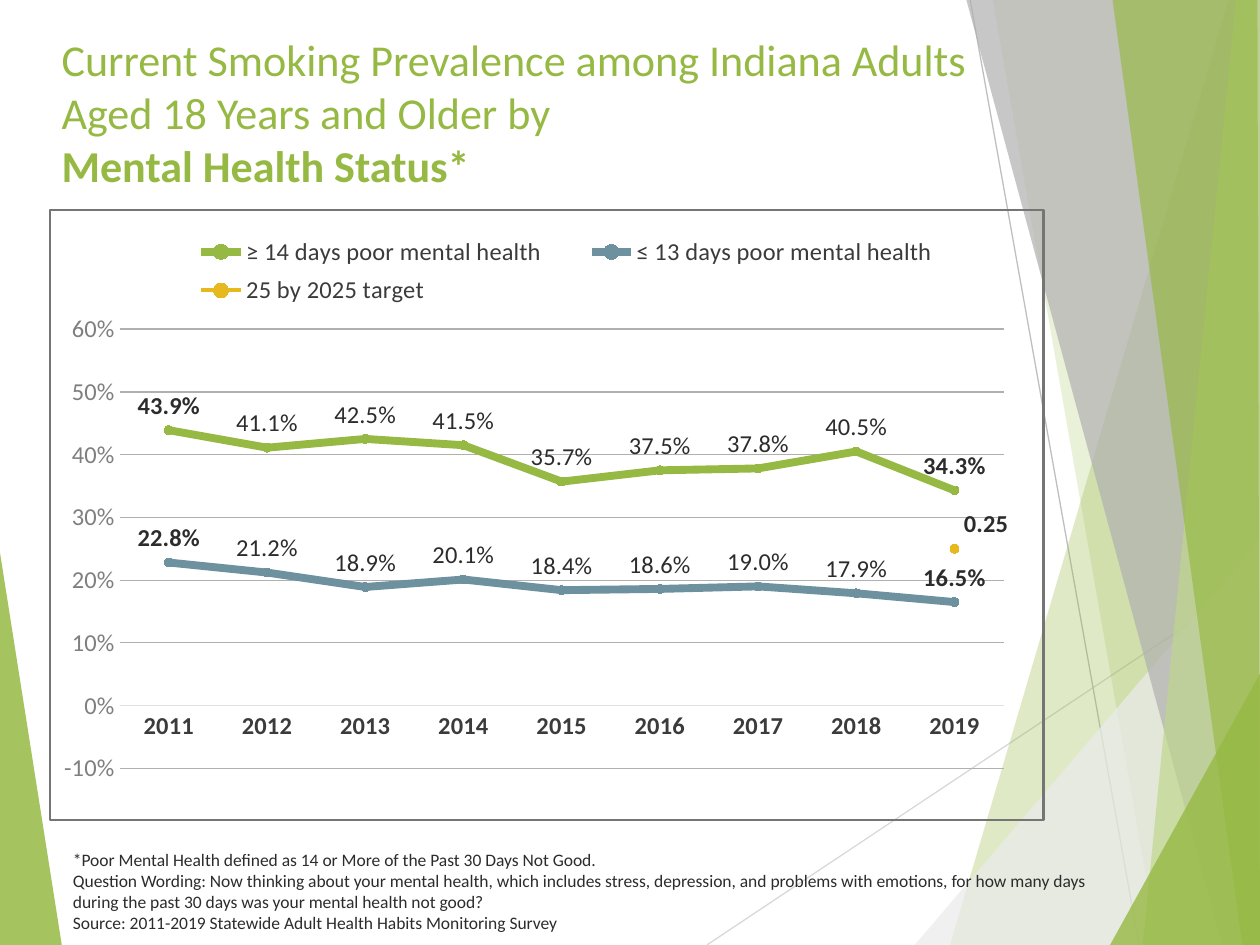
from typing import NamedTuple

from lxml.etree import SubElement
from pptx import Presentation
from pptx.chart.data import CategoryChartData
from pptx.dml.color import RGBColor
from pptx.enum.chart import (XL_CHART_TYPE, XL_LABEL_POSITION, XL_LEGEND_POSITION,
                             XL_MARKER_STYLE, XL_TICK_MARK)
from pptx.enum.shapes import MSO_CONNECTOR
from pptx.enum.text import MSO_ANCHOR
from pptx.oxml import parse_xml
from pptx.oxml.ns import nsdecls, qn
from pptx.util import Inches, Pt

FONT = "Calibri"
GREEN = RGBColor(0x96, 0xB9, 0x43)
PALE_GREEN = RGBColor(0xC0, 0xD6, 0x8D)
BLUE = RGBColor(0x6E, 0x91, 0xA0)
GOLD = RGBColor(0xE6, 0xB9, 0x1E)
ORANGE = RGBColor(0xFF, 0x99, 0x00)
INK = RGBColor(0x2C, 0x2C, 0x2C)
DARK = RGBColor(0x3B, 0x3B, 0x3B)
AXIS_TEXT = RGBColor(0x7F, 0x7F, 0x7F)
BORDER = RGBColor(0x75, 0x75, 0x75)
GRAY = RGBColor(0xB0, 0xB0, 0xB0)
MIST = RGBColor(0xEB, 0xEB, 0xEB)
AXIS_LINE = RGBColor(0xE1, 0xE1, 0xE1)
RULE = RGBColor(0xBF, 0xBF, 0xBF)
PALE_RULE = RGBColor(0xD9, 0xD9, 0xD9)

W, H = Inches(10), Inches(7.5)


class Facet(NamedTuple):
    """Filled polygon; points in percent of the slide's width and height."""
    points: list[tuple[float, float]]
    color: RGBColor
    opacity: int


class Rule(NamedTuple):
    """Thin line; ends in percent of the slide's width and height."""
    start: tuple[float, float]
    end: tuple[float, float]
    color: RGBColor


class Trend(NamedTuple):
    name: str
    values: list[float | None]
    color: RGBColor
    marker: RGBColor
    width: float
    number_format: str
    position: XL_LABEL_POSITION
    bold_points: list[int]


BACKDROP = [
    Facet([(0, 58.5), (4.9, 100), (0, 100)], GREEN, 85),
    Rule((56.1, 100), (100, 61), PALE_RULE),
    Rule((77, 0), (90.4, 100), RULE),
    Facet([(97.5, 0), (75.4, 100), (100, 100), (100, 0)], GREEN, 30),
    Facet([(78.8, 0), (91.9, 100), (100, 100), (100, 0)], GREEN, 20),
    Facet([(72.6, 100), (100, 57.2), (100, 100)], MIST, 72),
    Facet([(76.7, 0), (97, 100), (100, 100), (100, 0)], GRAY, 70),
    Facet([(98.1, 0), (90.7, 100), (100, 100), (100, 0)], PALE_GREEN, 70),
    Facet([(88.3, 0), (98.6, 100), (100, 100), (99.8, 0)], GREEN, 65),
    Facet([(88.1, 100), (100, 71.3), (100, 100)], GREEN, 80),
]

YEARS = [str(year) for year in range(2011, 2020)]
TRENDS = [
    Trend("≥ 14 days poor mental health",
          [0.439, 0.411, 0.425, 0.415, 0.357, 0.375, 0.378, 0.405, 0.343],
          GREEN, GREEN, 4.5, "0.0%", XL_LABEL_POSITION.ABOVE, [0, 8]),
    Trend("≤ 13 days poor mental health",
          [0.228, 0.212, 0.189, 0.201, 0.184, 0.186, 0.19, 0.179, 0.165],
          BLUE, BLUE, 4.5, "0.0%", XL_LABEL_POSITION.ABOVE, [0, 8]),
    Trend("25 by 2025 target", [None] * 8 + [0.25],
          GOLD, ORANGE, 2.25, "General", XL_LABEL_POSITION.RIGHT, [8]),
]


def share(point: tuple[float, float]) -> tuple[int, int]:
    return round(W * point[0] / 100), round(H * point[1] / 100)


def draw_facet(shapes, facet: Facet) -> None:
    first, *rest = map(share, facet.points)
    builder = shapes.build_freeform(*first)
    builder.add_line_segments(rest)
    sp = builder.convert_to_shape()
    sp.shadow.inherit = False
    sp.fill.solid()
    sp.fill.fore_color.rgb = facet.color
    sp.line.fill.background()
    color = sp._element.spPr.find(".//" + qn("a:srgbClr"))
    SubElement(color, qn("a:alpha"), val=str(facet.opacity * 1000))


def draw_rule(shapes, rule: Rule) -> None:
    line = shapes.add_connector(MSO_CONNECTOR.STRAIGHT, *share(rule.start), *share(rule.end))
    line.line.color.rgb = rule.color
    line.line.width = Pt(0.75)
    SubElement(line._element.spPr, qn("a:effectLst"))


def add_text_frame(shapes, left: float, top: float, width: float, height: float):
    tf = shapes.add_textbox(*map(Inches, (left, top, width, height))).text_frame
    tf.word_wrap = True
    return tf


def style_font(font, size: float, color: RGBColor, bold: bool = False) -> None:
    font.name, font.size, font.bold = FONT, Pt(size), bold
    font.color.rgb = color


def set_layout(parent, index: int, **values: float | str) -> None:
    """Give a chart part a manual layout, in shares of the chart's size."""
    for old in parent.findall(qn("c:layout")):
        parent.remove(old)
    items = "".join(f'<c:{key} val="{value}"/>' for key, value in values.items())
    parent.insert(index, parse_xml(f'<c:layout {nsdecls("c")}><c:manualLayout>{items}'
                                   '</c:manualLayout></c:layout>'))


def style_trend(series, trend: Trend) -> None:
    series.smooth = False
    series.format.line.color.rgb = trend.color
    series.format.line.width = Pt(trend.width)
    series.marker.style = XL_MARKER_STYLE.CIRCLE
    series.marker.size = 5
    series.marker.format.fill.solid()
    series.marker.format.fill.fore_color.rgb = trend.marker
    series.marker.format.line.color.rgb = trend.color
    labels = series.data_labels
    labels.show_value = True
    labels.number_format, labels.number_format_is_linked = trend.number_format, False
    labels.position = trend.position
    style_font(labels.font, 14, INK)
    for index in trend.bold_points:
        label = series.points[index].data_label
        style_font(label.font, 14, INK, bold=True)
        label.position = trend.position


def add_trend_chart(shapes) -> None:
    data = CategoryChartData()
    data.categories = YEARS
    for trend in TRENDS:
        data.add_series(trend.name, trend.values, trend.number_format)
    chart = shapes.add_chart(XL_CHART_TYPE.LINE_MARKERS, Inches(0.39), Inches(1.66),
                             Inches(7.9), Inches(4.86), data).chart
    chart.has_title = False
    style_font(chart.font, 10, DARK)
    for series, trend in zip(chart.plots[0].series, TRENDS):
        style_trend(series, trend)

    # Axes
    years, percent = chart.category_axis, chart.value_axis
    for axis in (years, percent):
        axis.major_tick_mark = axis.minor_tick_mark = XL_TICK_MARK.NONE
    style_font(years.tick_labels.font, 14, DARK, bold=True)
    years.format.line.color.rgb = AXIS_LINE
    years.format.line.width = Pt(0.75)
    style_font(percent.tick_labels.font, 14, AXIS_TEXT)
    percent.tick_labels.number_format = "0%"
    percent.tick_labels.number_format_is_linked = False
    percent.minimum_scale, percent.maximum_scale, percent.major_unit = -0.1, 0.6, 0.1
    percent.format.line.fill.background()
    percent.major_gridlines.format.line.color.rgb = GRAY
    percent.major_gridlines.format.line.width = Pt(0.75)

    # Legend above the plot
    chart.has_legend = True
    chart.legend.position = XL_LEGEND_POSITION.BOTTOM
    chart.legend.include_in_layout = True
    style_font(chart.legend.font, 14, DARK)
    set_layout(chart.legend._element, 1, xMode="edge", yMode="edge",
               x=0.11, y=0.03, w=0.82, h=0.14)

    # Plot area, raised target label and frame
    space = chart._chartSpace
    set_layout(space.find(".//" + qn("c:plotArea")), 0, layoutTarget="inner",
               xMode="edge", yMode="edge", x=0.07, y=0.195, w=0.89, h=0.72)
    target = chart.plots[0].series[2]._element.find(".//" + qn("c:dLbl"))
    set_layout(target, 1, x=0, y=-0.04)
    space.find(qn("c:chart")).addnext(parse_xml(
        f'<c:spPr {nsdecls("c", "a")}><a:noFill/><a:ln w="{Pt(1.25)}"><a:solidFill>'
        f'<a:srgbClr val="{BORDER}"/></a:solidFill></a:ln></c:spPr>'))


def main() -> None:
    prs = Presentation()
    prs.slide_width, prs.slide_height = W, H
    shapes = prs.slides.add_slide(prs.slide_layouts[6]).shapes

    # Faceted backdrop
    for part in BACKDROP:
        (draw_facet if isinstance(part, Facet) else draw_rule)(shapes, part)

    # Title
    tf = add_text_frame(shapes, 0.39, 0.17, 7.9, 1.44)
    tf.vertical_anchor = MSO_ANCHOR.MIDDLE
    p = tf.paragraphs[0]
    style_font(p.font, 25.2, GREEN)
    p.add_run().text = "Current Smoking Prevalence among Indiana Adults Aged 18 Years and Older by "
    p.add_line_break()
    r = p.add_run()
    r.text = "Mental Health Status*"
    r.font.bold = True

    add_trend_chart(shapes)

    # Footnotes
    tf = add_text_frame(shapes, 0.48, 6.69, 8.38, 0.77)
    tf.text = ("*Poor Mental Health defined as 14 or More of the Past 30 Days Not Good. \v"
               "Question Wording: Now thinking about your mental health, which includes stress, "
               "depression, and problems with emotions, for how many days during the past "
               "30 days was your mental health not good?\n"
               "Source: 2011-2019 Statewide Adult Health Habits Monitoring Survey")
    for p in tf.paragraphs:
        style_font(p.font, 10, INK)

    prs.save("out.pptx")


if __name__ == "__main__":
    main()
